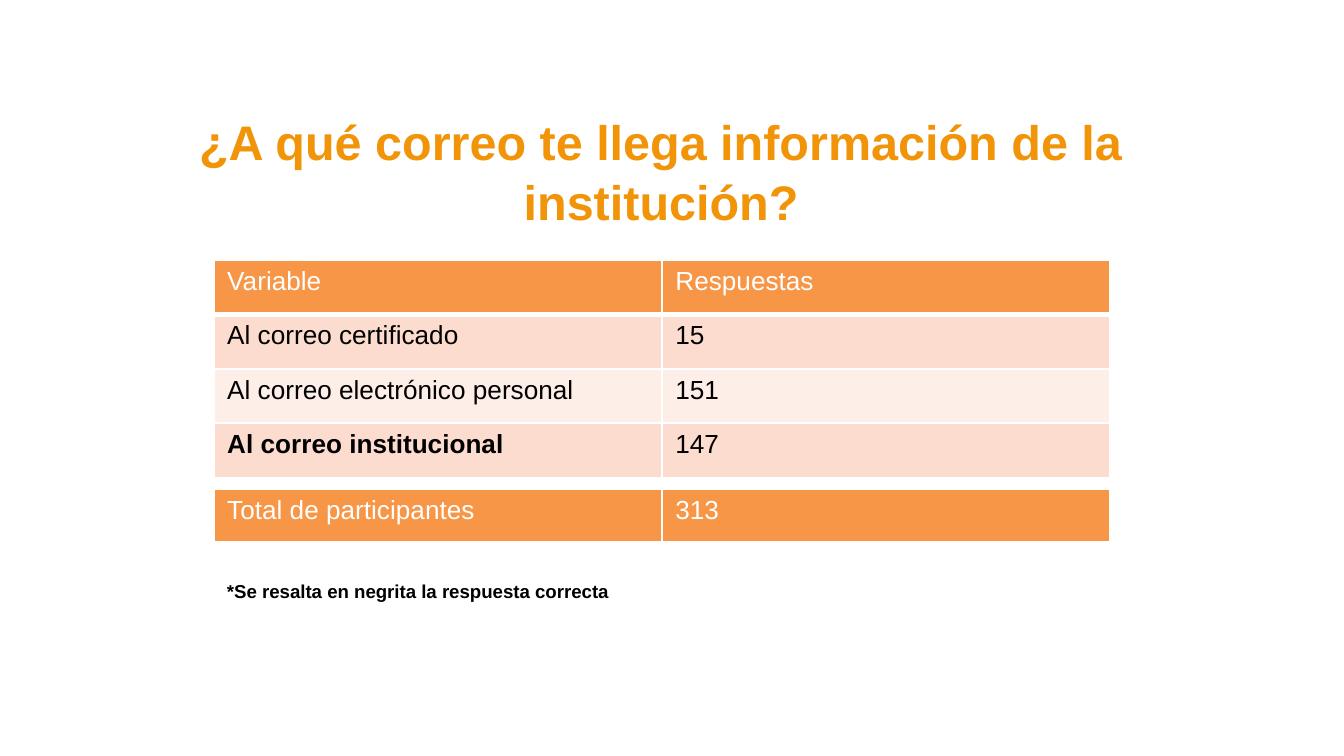
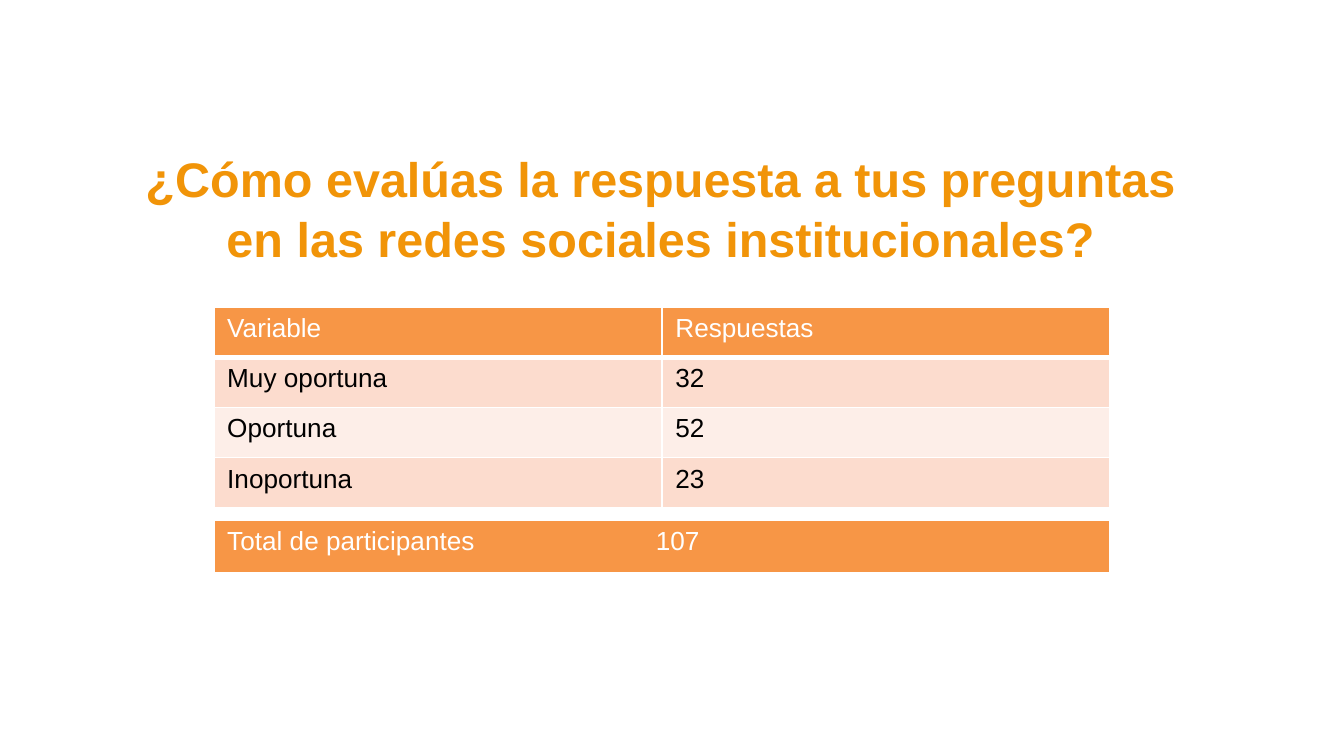
from dataclasses import dataclass

from lxml import etree
from pptx import Presentation
from pptx.dml.color import RGBColor
from pptx.enum.text import MSO_ANCHOR, MSO_AUTO_SIZE, PP_ALIGN
from pptx.oxml.ns import qn
from pptx.util import Cm, Emu, Pt

CENTER, LEFT = PP_ALIGN.CENTER, PP_ALIGN.LEFT
MIDDLE = MSO_ANCHOR.MIDDLE
NO_FIT, GROW = MSO_AUTO_SIZE.NONE, MSO_AUTO_SIZE.SHAPE_TO_FIT_TEXT
TITLE_ONLY = 5


@dataclass(frozen=True)
class Theme:
    font: str = "Arial"
    title: str = "F19408"
    header: str = "F79646"
    bands: tuple = ("FCDCCE", "FDEEE8")
    white: str = "FFFFFF"
    black: str = "000000"
    title_size: int = 26
    table_size: int = 14
    note_size: int = 10
    thin: int = 1
    thick: int = 3


THEME = Theme()
TABLE_LEFT, TABLE_WIDTH = Cm(4.04), Cm(16.94)
TOTAL_HEIGHT = Cm(1.03)
TOTAL_TAB = Cm(8.1)


def write(tf, text, size, color, bold=False, align=LEFT, gap=0, tab=None):
    for i, line in enumerate(text.split("\n")):
        p = tf.add_paragraph() if i else tf.paragraphs[0]
        p.alignment = align
        p.space_before = Pt(gap if i else 0)
        if tab:
            tabs = etree.SubElement(p._p.get_or_add_pPr(), qn("a:tabLst"))
            etree.SubElement(tabs, qn("a:tab"), pos=str(int(tab)), algn="l")
        r = p.add_run()
        r.text = line
        r.font.name, r.font.size, r.font.bold = THEME.font, Pt(size), bold
        r.font.color.rgb = RGBColor.from_string(color)


def set_borders(cell, top, bottom):
    tc_pr = cell._tc.get_or_add_tcPr()
    widths = {"L": THEME.thin, "R": THEME.thin, "T": top, "B": bottom}
    for side, width in widths.items():
        ln = etree.SubElement(tc_pr, qn(f"a:ln{side}"), w=str(int(Pt(width))))
        fill = etree.SubElement(ln, qn("a:solidFill"))
        etree.SubElement(fill, qn("a:srgbClr"), val=THEME.white)


def fill_cell(cell, text, fill, color, top=THEME.thin, bottom=THEME.thin,
              **fmt):
    set_borders(cell, top, bottom)
    cell.fill.solid()
    cell.fill.fore_color.rgb = RGBColor.from_string(fill)
    write(cell.text_frame, text, THEME.table_size, color, **fmt)


def add_grid(s, top, rows, cols, row_height):
    frame = s.shapes.add_table(rows, cols, TABLE_LEFT, top, TABLE_WIDTH,
                               Emu(row_height * rows))
    return frame.table


def add_title(s, text, top):
    sp = s.shapes.title
    sp.left, sp.top, sp.width, sp.height = Cm(1.22), top, Cm(22.56), Cm(2.62)
    tf = sp.text_frame
    tf.word_wrap, tf.auto_size, tf.vertical_anchor = True, NO_FIT, MIDDLE
    write(tf, text, THEME.title_size, THEME.title, bold=True, align=CENTER,
          gap=1)


def add_answers(s, top, row_height, answers, correct=None):
    rows = [("Variable", "Respuestas"), *answers]
    table = add_grid(s, top, len(rows), 2, row_height)
    for i, row in enumerate(rows):
        for j, text in enumerate(row):
            cell = table.cell(i, j)
            if i == 0:
                fill_cell(cell, text, THEME.header, THEME.white,
                          bottom=THEME.thick)
            else:
                fill_cell(cell, text, THEME.bands[(i - 1) % 2], THEME.black,
                          top=THEME.thick if i == 1 else THEME.thin,
                          bold=text == correct)


def add_total(s, top, texts, tab=None):
    table = add_grid(s, top, 1, len(texts), TOTAL_HEIGHT)
    for j, text in enumerate(texts):
        fill_cell(table.cell(0, j), text, THEME.header, THEME.white,
                  bottom=THEME.thick, tab=tab)


def add_note(s, text, top):
    sp = s.shapes.add_textbox(TABLE_LEFT, top, TABLE_WIDTH, Cm(0.69))
    tf = sp.text_frame
    tf.word_wrap, tf.auto_size = True, GROW
    write(tf, text, THEME.note_size, THEME.black, bold=True)


def add_slide(prs):
    return prs.slides.add_slide(prs.slide_layouts[TITLE_ONLY])


def add_email_slide(prs):
    s = add_slide(prs)
    add_title(s, "¿A qué correo te llega información de la\ninstitución?",
              Cm(1.93))
    add_answers(s, Cm(4.91), Cm(1.03),
                [("Al correo certificado", "15"),
                 ("Al correo electrónico personal", "151"),
                 ("Al correo institucional", "147")],
                correct="Al correo institucional")
    add_total(s, Cm(9.24), ["Total de participantes", "313"])
    add_note(s, "*Se resalta en negrita la respuesta correcta", Cm(10.84))


def add_social_slide(prs):
    s = add_slide(prs)
    add_title(s, "¿Cómo evalúas la respuesta a tus preguntas\n"
                 "en las redes sociales institucionales?", Cm(2.63))
    add_answers(s, Cm(5.8), Cm(0.95),
                [("Muy oportuna", "32"), ("Oportuna", "52"),
                 ("Inoportuna", "23")])
    add_total(s, Cm(9.83), ["Total de participantes\t107"], tab=TOTAL_TAB)


def main():
    prs = Presentation()
    prs.slide_width, prs.slide_height = Cm(25.4), Cm(14.29)
    add_email_slide(prs)
    add_social_slide(prs)
    prs.save("out.pptx")


if __name__ == "__main__":
    main()
